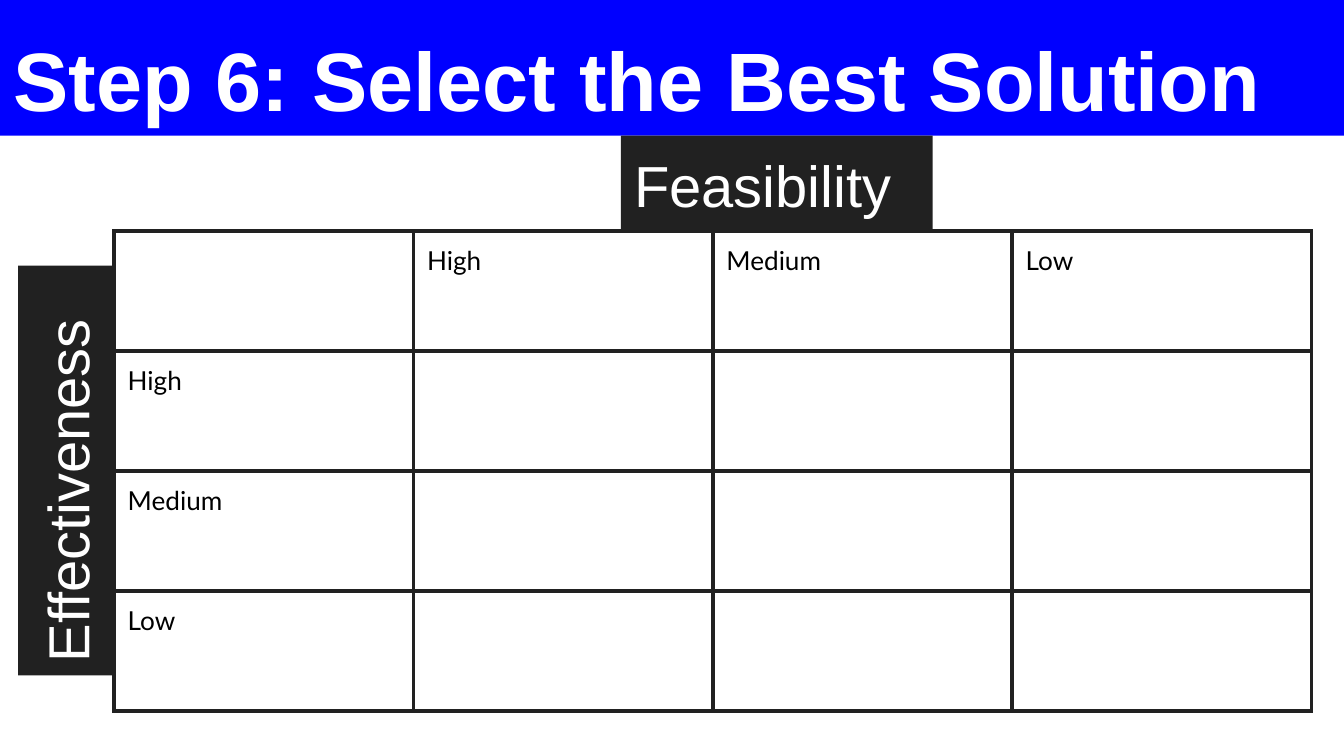
from lxml import etree
from pptx import Presentation
from pptx.dml.color import RGBColor
from pptx.enum import shapes, text
from pptx.oxml import ns
from pptx.util import Inches, Pt

BLUE = RGBColor(0x00, 0x00, 0xFF)
CHARCOAL = RGBColor(0x21, 0x21, 0x21)
WHITE = RGBColor(0xFF, 0xFF, 0xFF)
BLACK = RGBColor(0x00, 0x00, 0x00)

LEVELS = ["High", "Medium", "Low"]


class SlideBuilder:
    heading_font = "Arial"
    cell_font = "Lato"
    inset = Inches(0.1)
    border_width = Pt(2.25)

    def __init__(self, slide):
        self.slide = slide

    def set_margins(self, target):
        target.margin_left = target.margin_right = self.inset
        target.margin_top = target.margin_bottom = self.inset

    def style_runs(self, tf, font, size, color, bold=False):
        for p in tf.paragraphs:
            for r in p.runs:
                r.font.name = font
                r.font.size = Pt(size)
                r.font.color.rgb = color
                r.font.bold = bold

    def place(self, sp, left, top, width, height):
        sp.left, sp.top = Inches(left), Inches(top)
        sp.width, sp.height = Inches(width), Inches(height)

    def title(self, wording, left, top, width, height):
        sp = self.slide.shapes.title
        self.place(sp, left, top, width, height)
        sp.fill.solid()
        sp.fill.fore_color.rgb = BLUE
        tf = sp.text_frame
        tf.text = wording
        tf.word_wrap = True
        tf.auto_size = text.MSO_AUTO_SIZE.NONE
        tf.vertical_anchor = text.MSO_ANCHOR.BOTTOM
        self.set_margins(tf)
        tf.margin_bottom = Inches(0.06)
        p = tf.paragraphs[0]
        p.alignment = text.PP_ALIGN.LEFT
        p.line_spacing = 1.15
        p.space_before = Pt(0)
        self.style_runs(tf, self.heading_font, 44.4, WHITE, bold=True)

    def axis_label(self, wording, left, top, width, height, rotation=0):
        sp = self.slide.shapes.add_shape(
            shapes.MSO_SHAPE.RECTANGLE, Inches(left), Inches(top), Inches(width), Inches(height))
        sp.shadow.inherit = False
        sp.rotation = rotation
        sp.fill.solid()
        sp.fill.fore_color.rgb = CHARCOAL
        sp.line.fill.background()
        tf = sp.text_frame
        tf.text = wording
        tf.word_wrap = True
        tf.auto_size = text.MSO_AUTO_SIZE.SHAPE_TO_FIT_TEXT
        tf.vertical_anchor = text.MSO_ANCHOR.TOP
        self.set_margins(tf)
        tf.paragraphs[0].alignment = text.PP_ALIGN.LEFT
        self.style_runs(tf, self.heading_font, 31, WHITE)

    def cell_borders(self, cell):
        tc_pr = cell._tc.get_or_add_tcPr()
        for position, side in enumerate(("lnL", "lnR", "lnT", "lnB")):
            ln = etree.Element(ns.qn(f"a:{side}"), w=str(self.border_width))
            fill = etree.SubElement(ln, ns.qn("a:solidFill"))
            etree.SubElement(fill, ns.qn("a:srgbClr"), val=str(CHARCOAL))
            tc_pr.insert(position, ln)

    def matrix(self, levels, left, top, width, height):
        size = len(levels) + 1
        table = self.slide.shapes.add_table(
            size, size, Inches(left), Inches(top), Inches(width), Inches(height)).table
        table.first_row = False
        table.horz_banding = False
        for i, level in enumerate(levels, start=1):
            table.cell(0, i).text_frame.text = level
            table.cell(i, 0).text_frame.text = level
        for cell in table.iter_cells():
            self.set_margins(cell)
            cell.fill.background()
            self.cell_borders(cell)
            self.style_runs(cell.text_frame, self.cell_font, 14, BLACK)


def main():
    prs = Presentation()
    prs.slide_width = Inches(10)
    prs.slide_height = prs.slide_width * 9 // 16
    s = SlideBuilder(prs.slides.add_slide(prs.slide_layouts[5]))
    s.title("Step 6: Select the Best Solution", 0, 0, 10, 1.01)
    s.matrix(LEVELS, 0.85, 1.72, 8.91, 3.57)
    s.axis_label("Feasibility", 4.62, 1.01, 2.32, 0.72)
    s.axis_label("Effectiveness", -1.03, 3.14, 3.05, 0.72, rotation=270)
    prs.save("out.pptx")


if __name__ == "__main__":
    main()
